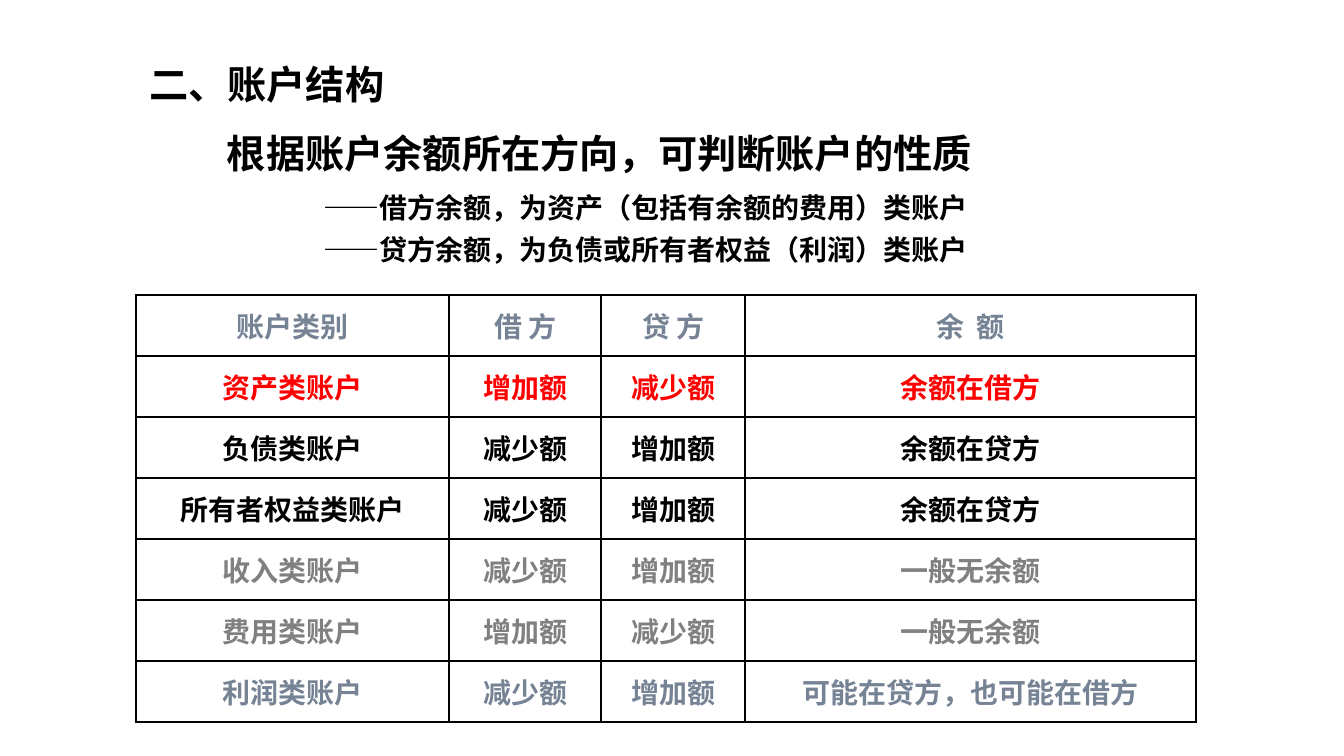
from dataclasses import dataclass
from lxml.etree import SubElement
from pptx import Presentation
from pptx.dml.color import RGBColor
from pptx.enum.text import MSO_ANCHOR, PP_ALIGN
from pptx.oxml.ns import qn
from pptx.util import Inches, Pt


@dataclass(frozen=True)
class Theme:
    black: str = "000000"
    red: str = "FF0000"
    grey: str = "808080"
    slate: str = "768395"
    title_font: str = "Roboto"
    body_font: str = "Noto Sans CJK SC"
    heading_size: float = 21
    body_size: float = 15
    heading_gap: float = 6
    point_gap: float = 3
    border_width: float = 1


class SlideBuilder:
    def __init__(self, deck, theme):
        self.theme = theme
        self.width, self.height = deck.slide_width, deck.slide_height
        self.slide = deck.slides.add_slide(deck.slide_layouts[5])

    def area(self, left, top, width, height):
        return (round(left * self.width / 100), round(top * self.height / 100),
                round(width * self.width / 100), round(height * self.height / 100))

    def format_runs(self, para, size, color, font):
        for span in para.runs:
            span.font.size = Pt(size)
            span.font.bold = True
            span.font.name = font
            span.font.color.rgb = RGBColor.from_string(color)
            east_asian = SubElement(span.font._element, qn("a:ea"))
            east_asian.set("typeface", self.theme.body_font)

    def title(self, text, area):
        box = self.slide.shapes.title
        box.left, box.top, box.width, box.height = self.area(*area)
        frame = box.text_frame
        frame.text = text
        frame.vertical_anchor = MSO_ANCHOR.MIDDLE
        para = frame.paragraphs[0]
        para.alignment = PP_ALIGN.LEFT
        self.format_runs(para, self.theme.heading_size, self.theme.black,
                         self.theme.title_font)

    def statement(self, heading, points, area, indent):
        box = self.slide.shapes.add_textbox(*self.area(*area))
        frame = box.text_frame
        frame.word_wrap = True
        frame.vertical_anchor = MSO_ANCHOR.MIDDLE
        frame.text = "\n".join([heading, *points])
        for index, para in enumerate(frame.paragraphs):
            para.line_spacing = 1.1
            size = self.theme.heading_size
            if index:
                size = self.theme.body_size
                gap = self.theme.heading_gap if index == 1 else self.theme.point_gap
                para.space_before = Pt(gap)
                para._p.get_or_add_pPr().set("marL", str(Inches(indent)))
            self.format_runs(para, size, self.theme.black, self.theme.body_font)

    def border(self, cell):
        properties = cell._tc.get_or_add_tcPr()
        for position, side in enumerate(("a:lnL", "a:lnR", "a:lnT", "a:lnB")):
            line = SubElement(properties, qn(side))
            line.set("w", str(Pt(self.theme.border_width)))
            fill = SubElement(line, qn("a:solidFill"))
            SubElement(fill, qn("a:srgbClr")).set("val", self.theme.black)
            properties.insert(position, line)

    def table(self, rows, colors, column_shares, area):
        left, top, width, height = self.area(*area)
        table = self.slide.shapes.add_table(
            len(rows), len(column_shares), left, top, width, height).table
        table.first_row = table.horz_banding = False
        for column, share in zip(table.columns, column_shares):
            column.width = round(width * share / sum(column_shares))
        for row, texts, color in zip(table.rows, rows, colors):
            row.height = height // len(rows)
            for cell, text in zip(row.cells, texts):
                cell.text = text
                cell.fill.background()
                cell.vertical_anchor = MSO_ANCHOR.MIDDLE
                cell.margin_left = cell.margin_right = Inches(0.08)
                cell.margin_top = cell.margin_bottom = Inches(0.04)
                para = cell.text_frame.paragraphs[0]
                para.alignment = PP_ALIGN.CENTER
                self.format_runs(para, self.theme.body_size, color,
                                 self.theme.body_font)
                self.border(cell)


def main():
    theme = Theme()
    deck = Presentation()
    deck.slide_width = Inches(10)
    deck.slide_height = deck.slide_width * 9 // 16
    page = SlideBuilder(deck, theme)

    increase, decrease = "增加额", "减少额"
    accounts = [
        ("账户类别", "借 方", "贷 方", "余  额"),
        ("资产类账户", increase, decrease, "余额在借方"),
        ("负债类账户", decrease, increase, "余额在贷方"),
        ("所有者权益类账户", decrease, increase, "余额在贷方"),
        ("收入类账户", decrease, increase, "一般无余额"),
        ("费用类账户", increase, decrease, "一般无余额"),
        ("利润类账户", decrease, increase, "可能在贷方，也可能在借方"),
    ]
    colors = [theme.slate, theme.red, theme.black, theme.black,
              theme.grey, theme.grey, theme.slate]
    page.table(accounts, colors, (2.33, 1.13, 1.07, 3.35),
               (10.1, 39.05, 78.9, 56.5))
    page.title("二、账户结构", (10.1, 7.1, 25, 8))
    page.statement(
        "根据账户余额所在方向，可判断账户的性质",
        ["——借方余额，为资产（包括有余额的费用）类账户",
         "——贷方余额，为负债或所有者权益（利润）类账户"],
        (15.9, 15.1, 68.1, 21.5), indent=0.72)
    deck.save("out.pptx")


if __name__ == "__main__":
    main()
